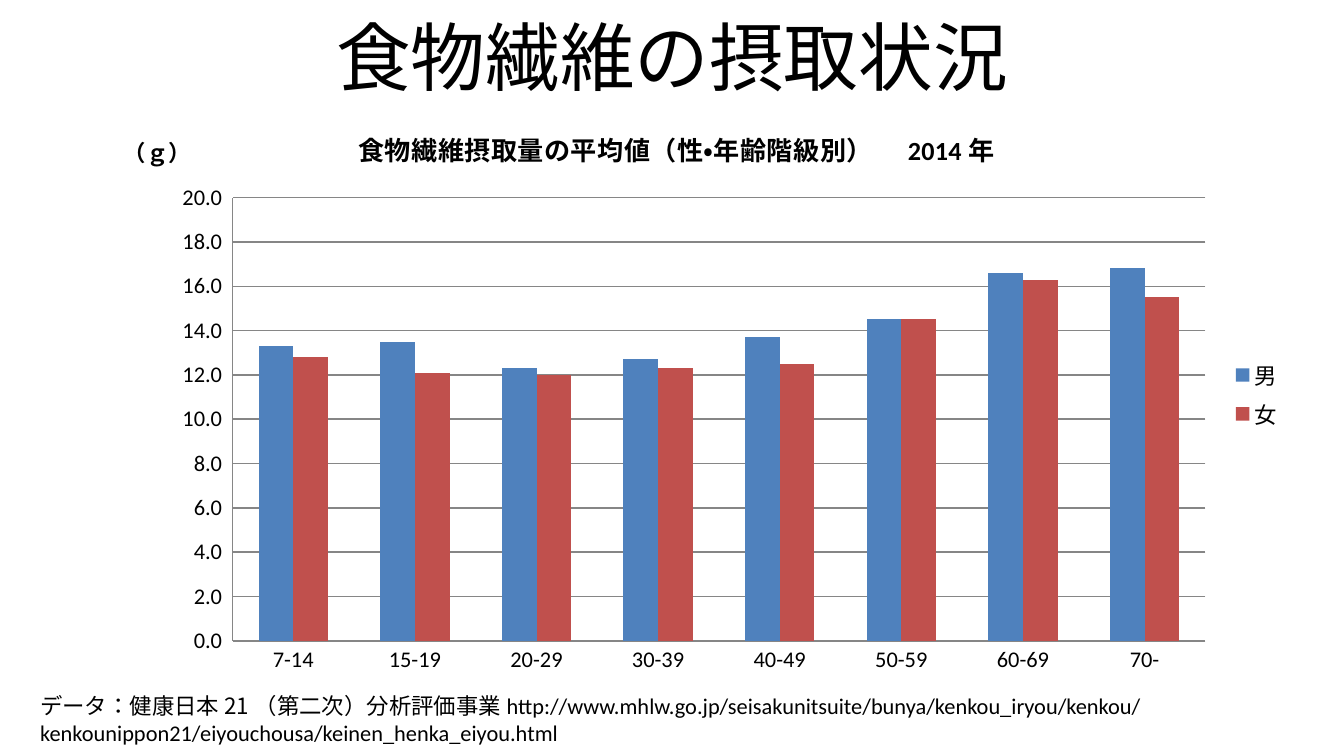
from lxml import etree
from pptx import Presentation
from pptx.chart.data import CategoryChartData
from pptx.dml.color import RGBColor
from pptx.enum.chart import XL_CHART_TYPE, XL_LEGEND_POSITION, XL_TICK_MARK
from pptx.enum.lang import MSO_LANGUAGE_ID
from pptx.enum.text import MSO_ANCHOR, PP_ALIGN
from pptx.oxml.ns import qn
from pptx.util import Inches, Pt

COLORS = {"text": "000000", "line": "868686", "男": "4F81BD", "女": "C0504D"}
LATIN, CJK = "Calibri", "Noto Sans CJK JP"
CHART_W, CHART_H = 9.21, 4.33


def style_font(font, size, bold=False, name=LATIN):
    values = {"size": Pt(size), "bold": bold, "name": name,
              "language_id": MSO_LANGUAGE_ID.JAPANESE}
    for attr, value in values.items():
        setattr(font, attr, value)
    font.color.rgb = RGBColor.from_string(COLORS["text"])


def set_layout(parent, index, **values):
    """Place a chart part by hand; x, y, w and h are inches within the chart."""
    scale = {"x": CHART_W, "y": CHART_H, "w": CHART_W, "h": CHART_H}
    for old in parent.findall(qn("c:layout")):
        parent.remove(old)
    layout = etree.Element(qn("c:layout"))
    manual = etree.SubElement(layout, qn("c:manualLayout"))
    for tag, value in values.items():
        share = value / scale[tag] if tag in scale else value
        etree.SubElement(manual, qn(f"c:{tag}"), val=str(share))
    parent.insert(index, layout)


prs = Presentation()
prs.slide_width = Inches(10)
prs.slide_height = prs.slide_width * 9 // 16
s = prs.slides.add_slide(prs.slide_layouts[6])

# Heading
tf = s.shapes.add_textbox(Inches(0.5), Inches(-0.02), Inches(9), Inches(0.87)).text_frame
tf.word_wrap = True
tf.vertical_anchor = MSO_ANCHOR.MIDDLE
p = tf.paragraphs[0]
p.alignment = PP_ALIGN.CENTER
r = p.add_run()
r.text = "食物繊維の摂取状況"
style_font(r.font, 40)

# Data source
tf = s.shapes.add_textbox(Inches(0.2), Inches(5.1), Inches(9.61), Inches(0.5)).text_frame
tf.word_wrap = True
for text, name in [
    ("データ：", LATIN),
    ("健康日本21（第二次）分析評価事業", CJK),
    ("http://www.mhlw.go.jp/seisakunitsuite/bunya/kenkou_iryou/kenkou/"
     "kenkounippon21/eiyouchousa/keinen_henka_eiyou.html", LATIN),
]:
    r = tf.paragraphs[0].add_run()
    r.text = text
    style_font(r.font, 12, name=name)

# Intake by sex and age group
data = CategoryChartData(number_format="0.0")
data.categories = ["7-14", "15-19", "20-29", "30-39", "40-49", "50-59", "60-69", "70-"]
data.add_series("男", [13.3, 13.5, 12.3, 12.7, 13.7, 14.5, 16.6, 16.8])
data.add_series("女", [12.8, 12.1, 12, 12.3, 12.5, 14.5, 16.3, 15.5])
chart = s.shapes.add_chart(XL_CHART_TYPE.COLUMN_CLUSTERED, Inches(0.43), Inches(0.77),
                           Inches(CHART_W), Inches(CHART_H), data).chart
style_font(chart.font, 10)

plot = chart.plots[0]
plot.gap_width, plot.overlap, plot.vary_by_categories = 150, 0, False
for series in plot.series:
    series.format.fill.solid()
    series.format.fill.fore_color.rgb = RGBColor.from_string(COLORS[series.name])

cat_axis, val_axis = chart.category_axis, chart.value_axis
for axis in (cat_axis, val_axis):
    axis.major_tick_mark = axis.minor_tick_mark = XL_TICK_MARK.NONE
    style_font(axis.tick_labels.font, 12)
val_axis.minimum_scale, val_axis.maximum_scale, val_axis.major_unit = 0, 20, 2
val_axis.has_major_gridlines = True
val_axis.tick_labels.number_format = r"0.0_);[Red]\(0.0\)"
val_axis.tick_labels.number_format_is_linked = False
for part in (cat_axis, val_axis, val_axis.major_gridlines):
    part.format.line.width = Pt(0.75)
    part.format.line.color.rgb = RGBColor.from_string(COLORS["line"])

for title, text, size in [
    (chart.chart_title, "食物繊維摂取量の平均値（性・年齢階級別）　2014年", 14),
    (val_axis.axis_title, "（ｇ）", 12),
]:
    r = title.text_frame.paragraphs[0].add_run()
    r.text = text
    style_font(r.font, size, bold=True)
chart.chart_title.include_in_layout = False

chart.has_legend = True
chart.legend.position = XL_LEGEND_POSITION.RIGHT
chart.legend.include_in_layout = False
style_font(chart.legend.font, 12)

# Upright unit label above the value axis
unit = val_axis.axis_title._element
body = next(unit.iter(qn("a:bodyPr")))
body.set("rot", "0")
body.set("vert", "horz")
set_layout(unit, 1, xMode="edge", yMode="edge", x=0.46, y=0.18)
set_layout(next(chart._chartSpace.iter(qn("c:plotArea"))), 0, layoutTarget="inner",
           xMode="edge", yMode="edge", x=1.3, y=0.7, w=7.24, h=3.3)

prs.save("out.pptx")
